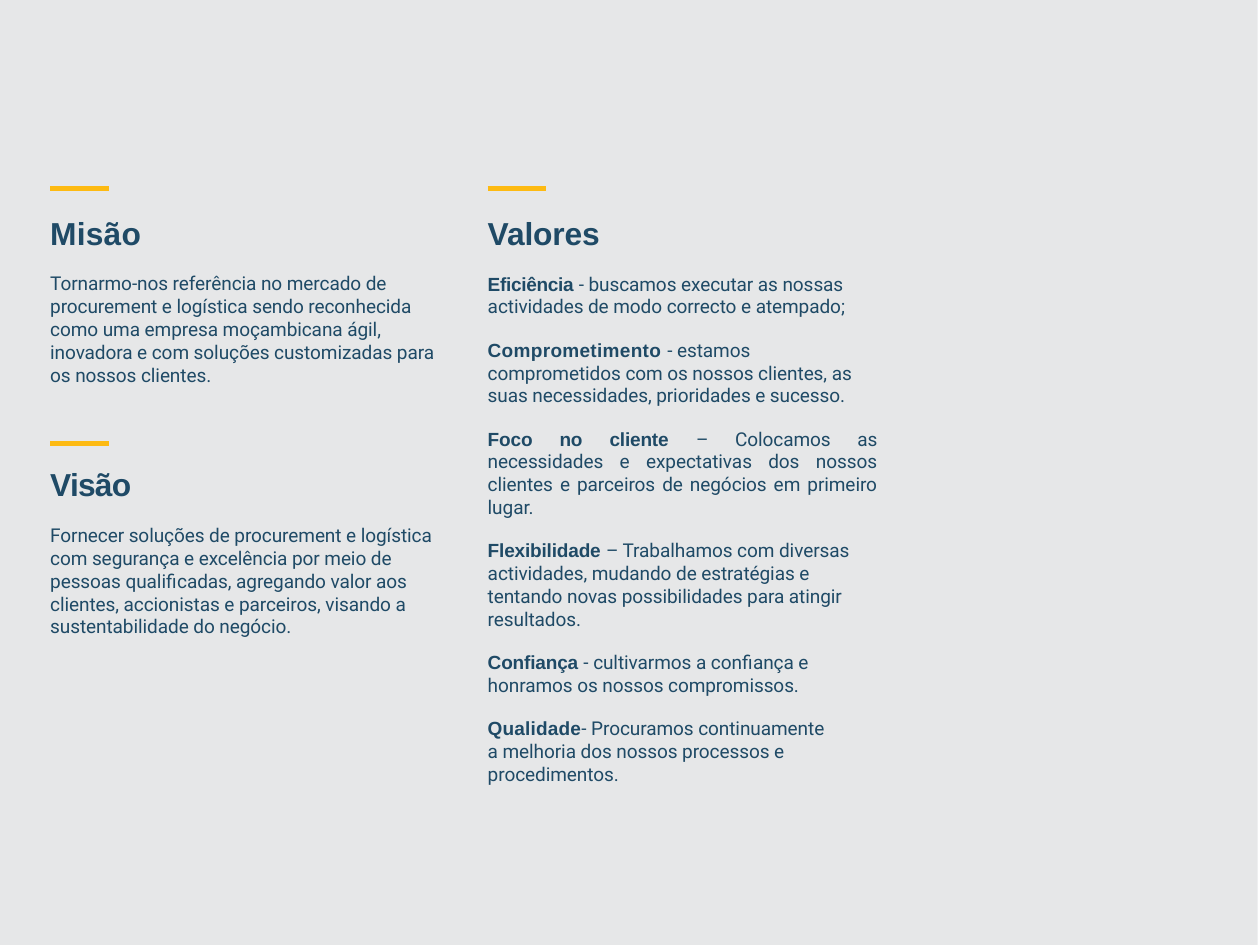
from lxml.etree import SubElement
from pptx import Presentation
from pptx.dml.color import RGBColor
from pptx.enum.shapes import MSO_CONNECTOR, MSO_SHAPE
from pptx.enum.text import PP_ALIGN
from pptx.oxml.ns import qn
from pptx.util import Inches, Pt


def color(value):
    return RGBColor.from_string(value)


class SlideWriter:
    ink = "1F4A66"
    accent = "FDBA12"
    paper = "E6E7E8"
    heading_font = "Arial"
    body_font = "Roboto"
    gap = 12.8
    body_tracking = -0.05

    def __init__(self, page):
        self.page = page

    def background(self, width, height):
        panel = self.page.shapes.add_shape(
            MSO_SHAPE.RECTANGLE, 0, 0, Inches(width), Inches(height))
        panel.shadow.inherit = False
        panel.fill.solid()
        panel.fill.fore_color.rgb = color(self.paper)
        panel.line.fill.background()

    def accent_line(self, left, top):
        line = self.page.shapes.add_connector(
            MSO_CONNECTOR.STRAIGHT, Inches(left), Inches(top),
            Inches(left + 0.51), Inches(top))
        line.line.color.rgb = color(self.accent)
        line.line.width = Pt(3)
        SubElement(line._element.spPr, qn("a:effectLst"))

    def text_box(self, left, top, width, height):
        box = self.page.shapes.add_textbox(
            Inches(left), Inches(top), Inches(width), Inches(height))
        frame = box.text_frame
        frame.word_wrap = True
        frame.margin_left = frame.margin_right = frame.margin_bottom = 0
        frame.margin_top = Inches(0.02)
        return frame

    def paragraph(self, frame, right_margin=0, justified=False):
        first = frame.paragraphs[0]
        para = frame.add_paragraph() if first.runs else first
        if para is not first:
            para.space_before = Pt(self.gap)
        properties = para._p.get_or_add_pPr()
        properties.set("marL", str(Inches(0.01)))
        properties.set("marR", str(Inches(right_margin)))
        para.alignment = PP_ALIGN.JUSTIFY if justified else PP_ALIGN.LEFT
        return para

    def span(self, para, text, font, size, bold, tracking):
        span = para.add_run()
        span.text = text
        span.font.name = font
        span.font.size = Pt(size)
        span.font.bold = bold
        span.font.color.rgb = color(self.ink)
        span._r.get_or_add_rPr().set("spc", str(round(tracking * 100)))

    def heading(self, frame, text, tracking):
        self.span(self.paragraph(frame), text, self.heading_font, 20, True, tracking)

    def body(self, frame, text):
        self.span(self.paragraph(frame), text, self.body_font, 12, False,
                  self.body_tracking)

    def value(self, frame, name, tracking, text, right_margin, justified):
        para = self.paragraph(frame, right_margin, justified)
        self.span(para, name, self.heading_font, 12, True, tracking)
        self.span(para, text, self.body_font, 12, False, self.body_tracking)


MISSION = ("Tornarmo-nos referência no mercado de procurement e logística sendo "
           "reconhecida como uma empresa moçambicana ágil, inovadora e com "
           "soluções customizadas para os nossos clientes.")
VISION = ("Fornecer soluções de procurement e logística com segurança e "
          "excelência por meio de pessoas qualificadas, agregando valor aos "
          "clientes, accionistas e parceiros, visando a sustentabilidade do negócio.")
VALUES = [
    ("Eficiência ", -0.2, "- buscamos executar as nossas actividades de modo "
     "correcto e atempado;", 0.15, False),
    ("Comprometimento ", 0.2, "- estamos comprometidos com os nossos clientes, "
     "as suas necessidades, prioridades e sucesso.", 0.15, False),
    ("Foco no cliente ", -0.1, "– Colocamos as necessidades e expectativas dos "
     "nossos clientes e parceiros de negócios em primeiro lugar.", 0, True),
    ("Flexibilidade ", -0.1, "– Trabalhamos com diversas actividades, mudando de "
     "estratégias e tentando novas possibilidades para atingir resultados.",
     0.15, False),
    ("Confiança ", -0.1, "- cultivarmos a confiança e honramos os nossos "
     "compromissos.", 0.15, False),
    ("Qualidade", 0.1, "- Procuramos continuamente a melhoria dos nossos "
     "processos e procedimentos.", 0.38, False),
]


def main():
    deck = Presentation()
    deck.slide_width = Inches(11.03)
    deck.slide_height = Inches(8.27)
    writer = SlideWriter(deck.slides.add_slide(deck.slide_layouts[6]))
    writer.background(11.01, 8.27)

    mission_title = writer.text_box(0.43, 1.85, 0.83, 0.36)
    writer.heading(mission_title, "Misão", 0.1)
    mission = writer.text_box(0.43, 2.36, 3.43, 1.03)
    writer.body(mission, MISSION)

    vision = writer.text_box(0.43, 4.05, 3.44, 1.54)
    writer.heading(vision, "Visão", -0.5)
    writer.body(vision, VISION)

    values = writer.text_box(4.26, 1.85, 3.42, 4.94)
    writer.heading(values, "Valores", -0.1)
    for entry in VALUES:
        writer.value(values, *entry)

    for left, top in [(0.44, 1.65), (4.27, 1.65), (0.44, 3.88)]:
        writer.accent_line(left, top)

    deck.save("out.pptx")


if __name__ == "__main__":
    main()
